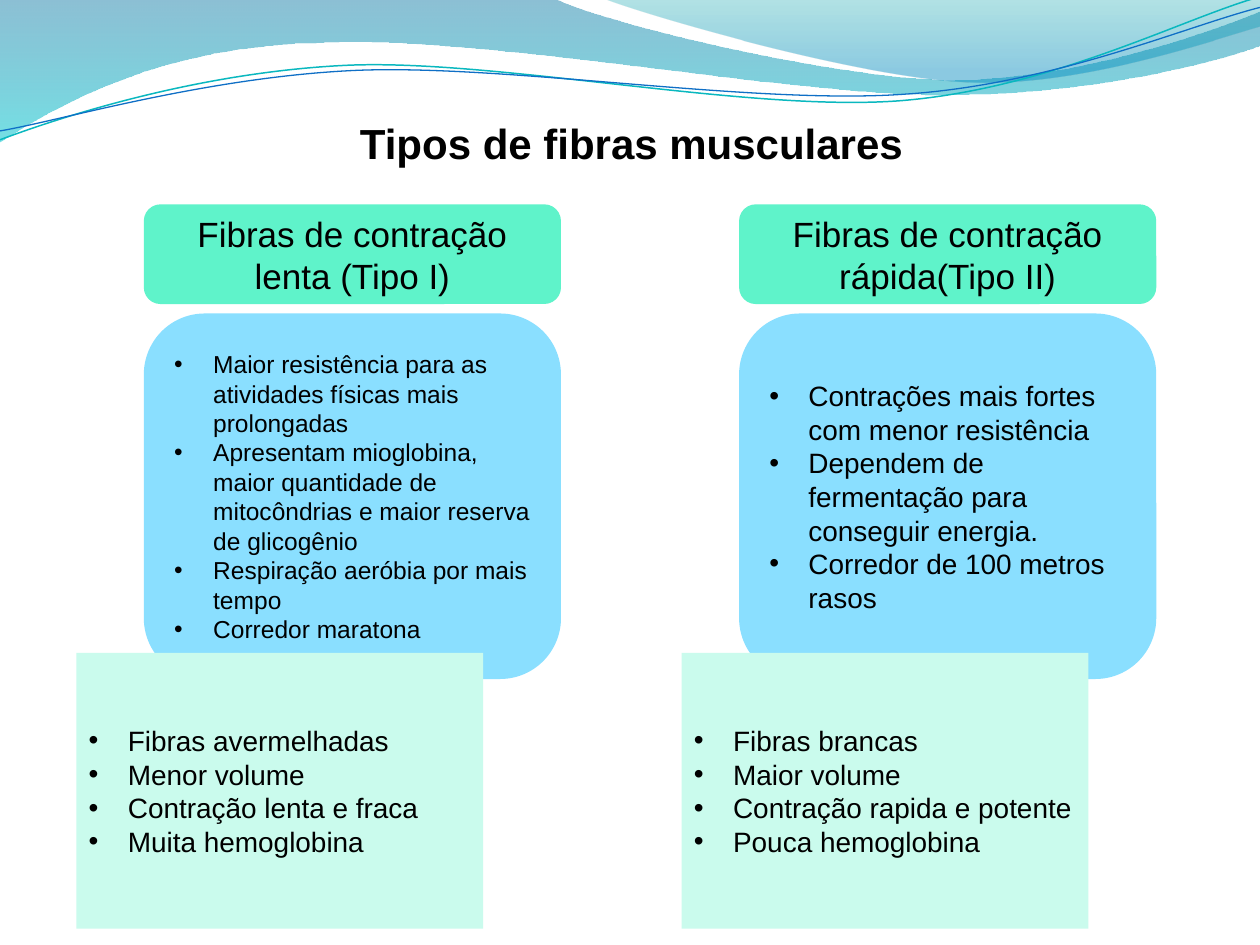
"""Build the slide comparing slow and fast muscle fibre types."""
from lxml import etree
from pptx import Presentation
from pptx.dml.color import RGBColor
from pptx.enum.shapes import MSO_SHAPE
from pptx.enum.text import MSO_ANCHOR, MSO_AUTO_SIZE, PP_ALIGN
from pptx.oxml.ns import qn
from pptx.util import Cm, Pt

RECT, ROUNDED = MSO_SHAPE.RECTANGLE, MSO_SHAPE.ROUNDED_RECTANGLE
MIDDLE = MSO_ANCHOR.MIDDLE
GROW = MSO_AUTO_SIZE.SHAPE_TO_FIT_TEXT
LEFT, CENTER = PP_ALIGN.LEFT, PP_ALIGN.CENTER


def rgb(value):
    return RGBColor.from_string(value)


def add_curve(box, start, segments, closed):
    left, top, width, height = box
    builder = slide.shapes.build_freeform(Cm(left), Cm(top))
    builder.add_line_segments([(Cm(left + width), Cm(top + height))], close=False)
    curve = builder.convert_to_shape()
    curve.shadow.inherit = False
    geometry = next(curve.element.spPr.iter(qn("a:path")))
    for command in list(geometry):
        geometry.remove(command)
    tags = {2: "a:lnTo", 6: "a:cubicBezTo"}
    commands = [("a:moveTo", start)] + [(tags[len(segment)], segment) for segment in segments]
    for tag, numbers in commands:
        command = etree.SubElement(geometry, qn(tag))
        for x, y in zip(numbers[::2], numbers[1::2]):
            etree.SubElement(command, qn("a:pt"), x=str(Cm(x - left)), y=str(Cm(y - top)))
    if closed:
        etree.SubElement(geometry, qn("a:close"))
    return curve


prs = Presentation()
prs.slide_width, prs.slide_height = Cm(25.4), Cm(19.05)
slide = prs.slides.add_slide(prs.slide_layouts[5])

waves = [
    ((-0.03, -0.03, 25.45, 2.9), (0, -0.03),
     [(11.18, -0.03), (12.09, 0.43, 16.87, 1.6, 19.25, 1.6),
      (21.67, 1.6, 24.33, 0.66, 25.4, 0.23), (25.42, 0.91),
      (24.97, 1.12, 22.1, 1.93, 18.95, 1.91), (15.8, 1.91, 9.7, 0.71, 6.53, 0.86),
      (3.28, 0.89, 1.17, 2.11, -0.03, 2.87), (0, -0.03)],
     [(0, "0074A1", 45), (1, "00C6CF", 55)]),
    ((12.17, -0.03, 13.23, 1.78), (12.17, -0.03),
     [(12.93, 0.28, 17.32, 1.57, 19.53, 1.65), (21.74, 1.75, 24.41, 0.81, 25.4, 0.53),
      (25.4, 0), (12.17, -0.03)],
     [(0, "00A1A9", 30), (0.8, "008BBF", 45)]),
]
for box, start, segments, stops in waves:
    wave = add_curve(box, start, segments, True)
    wave.line.fill.background()
    wave.fill.gradient()
    wave.fill.gradient_angle = 270
    for stop, (position, color, _) in zip(wave.fill.gradient_stops, stops):
        stop.position = position
        stop.color.rgb = rgb(color)
    stop_colors = wave.element.spPr.iter(qn("a:srgbClr"))
    for stop_color, (_, _, opacity) in zip(stop_colors, stops):
        etree.SubElement(stop_color, qn("a:alpha"), val=str(opacity * 1000))

ripple_data = [
    ((-0.05, 0.55, 25.45, 1.81), (-0.05, 2.22),
     [(1.19, 1.82, 4.02, 1.04, 7.05, 1.05), (10.05, 1.07, 15.02, 2.37, 18.08, 2.29),
      (21.13, 2.2, 23.86, 0.91, 25.4, 0.55)], "0AB8BF", 0.85),
    ((-0.04, 0.75, 25.49, 1.48), (-0.04, 2.04),
     [(1.16, 1.9, 4.17, 1.15, 7.2, 1.16), (10.25, 1.18, 15.13, 2.23, 18.19, 2.16),
      (21.21, 2.11, 23.93, 1.06, 25.45, 0.75)], "0F6FC6", 0.75),
]
ripples = []
for box, start, segments, color, width in ripple_data:
    ripple = add_curve(box, start, segments, False)
    ripple.rotation = 357.3
    ripple.fill.background()
    ripple.line.color.rgb = rgb(color)
    ripple.line.width = Pt(width)
    ripples.append(ripple)
slide.shapes.add_group_shape(ripples)

title = slide.shapes.title
title.left, title.top, title.width, title.height = Cm(0.03), Cm(2.22), Cm(25.4), Cm(1.3)
title.text_frame.vertical_anchor = MIDDLE
title.text_frame.auto_size = GROW
heading = title.text_frame.paragraphs[0]
heading.alignment = CENTER
heading_run = heading.add_run()
heading_run.text = "Tipos de fibras musculares"
heading_run.font.name, heading_run.font.size, heading_run.font.bold = "Arial", Pt(24), True
heading_run.font.color.rgb = rgb("000000")

fibre_types = [
    (14.9, 13.74, "Fibras de contração rápida(Tipo II)", 16,
     ["Contrações mais fortes com menor resistência",
      "Dependem de fermentação para conseguir energia.",
      "Corredor de 100 metros rasos"],
     ["Fibras brancas", "Maior volume", "Contração rapida e potente", "Pouca hemoglobina"]),
    (2.9, 1.54, "Fibras de contração lenta (Tipo I)", 14,
     ["Maior resistência para as atividades físicas mais prolongadas",
      "Apresentam mioglobina, maior quantidade de mitocôndrias e maior reserva de glicogênio",
      "Respiração aeróbia por mais tempo",
      "Corredor maratona"],
     ["Fibras avermelhadas", "Menor volume", "Contração lenta e fraca", "Muita hemoglobina"]),
]
for main_left, traits_left, name, function_size, functions, traits in fibre_types:
    cards = [
        (ROUNDED, main_left, 6.32, 8.41, 7.37, "8ADFFF", function_size, functions, True),
        (ROUNDED, main_left, 4.12, 8.41, 2.01, "5FF3CA", 20, [name], False),
        (RECT, traits_left, 13.16, 8.2, 5.56, "CAFBED", 16, traits, True),
    ]
    for form, left, top, width, height, color, size, lines, bulleted in cards:
        card = slide.shapes.add_shape(form, Cm(left), Cm(top), Cm(width), Cm(height))
        card.shadow.inherit = False
        card.fill.solid()
        card.fill.fore_color.rgb = rgb(color)
        card.line.fill.background()
        frame = card.text_frame
        frame.word_wrap = True
        frame.vertical_anchor = MIDDLE
        for index, line in enumerate(lines):
            paragraph = frame.add_paragraph() if index else frame.paragraphs[0]
            paragraph.alignment = LEFT if bulleted else CENTER
            if bulleted:
                properties = paragraph._p.get_or_add_pPr()
                properties.set("marL", str(Cm(0.79)))
                properties.set("indent", str(-Cm(0.79)))
                etree.SubElement(properties, qn("a:buFont"), typeface="Arial")
                etree.SubElement(properties, qn("a:buChar"), char="•")
            run = paragraph.add_run()
            run.text = line
            run.font.name, run.font.size = "Arial", Pt(size)
            run.font.color.rgb = rgb("000000")

prs.save("out.pptx")
